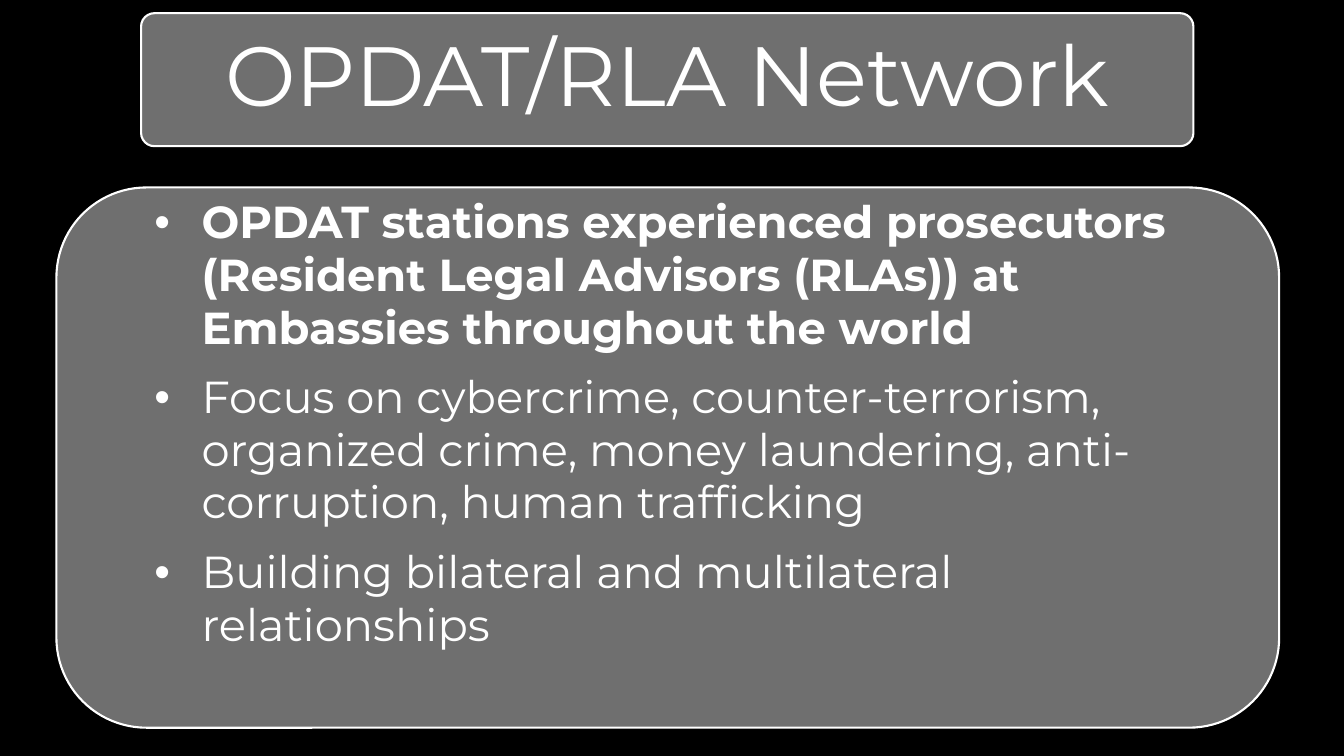
from lxml import etree
from pptx import Presentation
from pptx import util as u
from pptx.dml.color import RGBColor
from pptx.enum import shapes, text
from pptx.oxml.ns import qn

BLACK = RGBColor(0x00, 0x00, 0x00)
GRAY = RGBColor(0x6F, 0x6F, 0x6F)
WHITE = RGBColor(0xFF, 0xFF, 0xFF)

TITLE = "OPDAT/RLA Network"
POINTS = [
    ("OPDAT stations experienced prosecutors (Resident Legal Advisors (RLAs)) "
     "at Embassies throughout the world", True),
    ("Focus on cybercrime, counter-terrorism, organized crime, money laundering, "
     "anti-corruption, human trafficking", False),
    ("Building bilateral and multilateral relationships", False),
]


class SlideBuilder:
    font_name = "Montserrat"

    def __init__(self, slide):
        self.slide = slide
        slide.background.fill.solid()
        slide.background.fill.fore_color.rgb = BLACK

    def panel(self, parent, box, corner):
        panel = parent.add_shape(
            shapes.MSO_SHAPE.ROUNDED_RECTANGLE, *map(u.Pt, box))
        panel.adjustments[0] = corner
        panel.shadow.inherit = False
        panel.fill.solid()
        panel.fill.fore_color.rgb = GRAY
        panel.line.color.rgb = WHITE
        panel.line.width = u.Pt(1.5)

    def text_frame(self, parent, box, side_inset, top_inset, anchor):
        frame = parent.add_textbox(*map(u.Pt, box)).text_frame
        frame.word_wrap = True
        frame.vertical_anchor = anchor
        frame.margin_left = frame.margin_right = u.Pt(side_inset)
        frame.margin_top = frame.margin_bottom = u.Pt(top_inset)
        return frame

    def run(self, paragraph, words, size, bold=False):
        run = paragraph.add_run()
        run.text = words
        run.font.name = self.font_name
        run.font.size = u.Pt(size)
        run.font.bold = bold
        run.font.color.rgb = WHITE

    def bullet(self, paragraph, indent, hanging):
        props = paragraph._p.get_or_add_pPr()
        props.set("marL", str(u.Pt(indent)))
        props.set("indent", str(-u.Pt(hanging)))
        color = etree.SubElement(props, qn("a:buClr"))
        etree.SubElement(color, qn("a:srgbClr"), val=str(WHITE))
        etree.SubElement(props, qn("a:buFont"), typeface="Arial")
        etree.SubElement(props, qn("a:buChar"), char="•")

    def title(self, words):
        group = self.slide.shapes.add_group_shape().shapes
        self.panel(group, (100.8, 9.4, 751.7, 95), 0.1)
        frame = self.text_frame(group, (103.7, 12.2, 745.9, 89.3), 8.6, 5.8,
                                text.MSO_ANCHOR.MIDDLE)
        heading = frame.paragraphs[0]
        heading.alignment = text.PP_ALIGN.CENTER
        heading.line_spacing = 0.9
        self.run(heading, words, 60)

    def body(self, points):
        self.panel(self.slide.shapes, (40.3, 133.9, 873.4, 385.9), 0.1667)
        frame = self.text_frame(self.slide.shapes, (108, 136.8, 764.6, 363.6),
                                0, 3.6, text.MSO_ANCHOR.TOP)
        for index, (words, bold) in enumerate(points):
            point = frame.add_paragraph() if index else frame.paragraphs[0]
            point.line_spacing = 0.98
            point.space_before = u.Pt(12)
            self.bullet(point, 36, 33.8)
            self.run(point, words, 32, bold)


def main():
    deck = Presentation()
    deck.slide_width, deck.slide_height = u.Pt(960), u.Pt(540)
    builder = SlideBuilder(deck.slides.add_slide(deck.slide_layouts[6]))
    builder.body(POINTS)
    builder.title(TITLE)
    deck.save("out.pptx")


if __name__ == "__main__":
    main()
